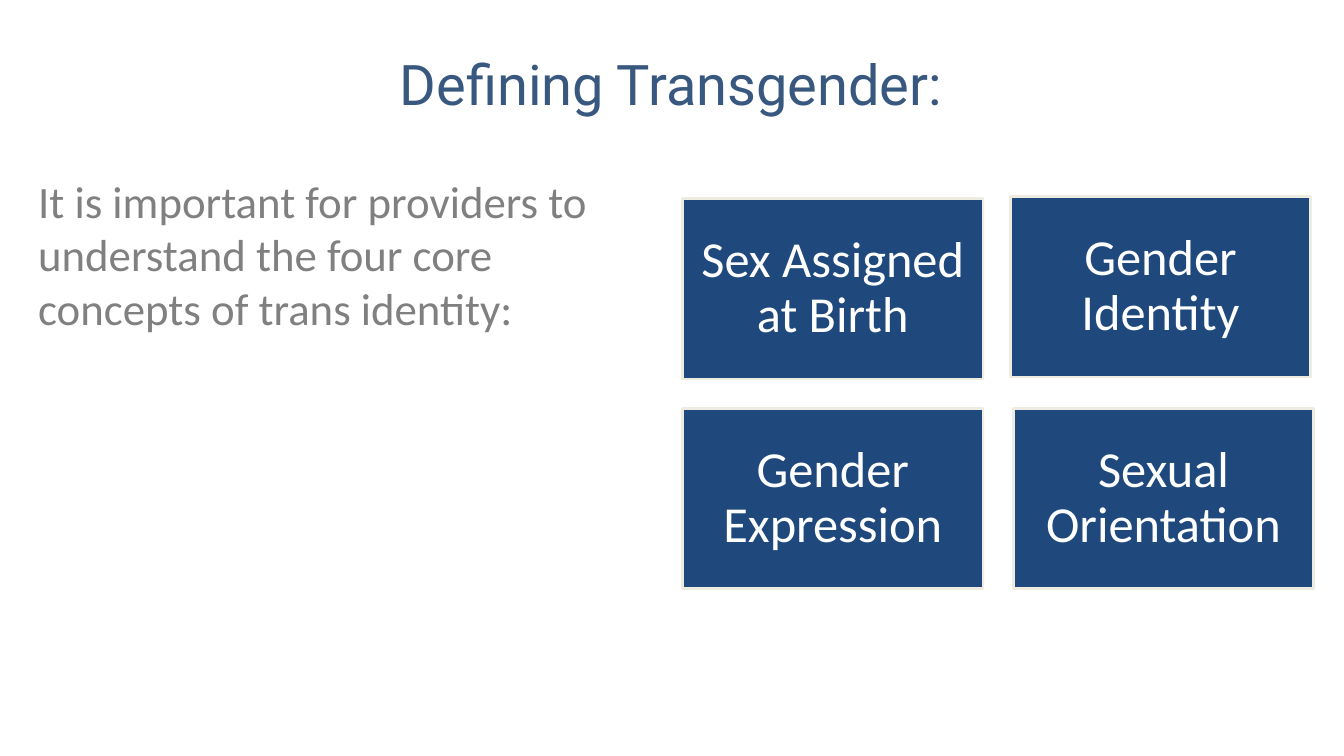
from dataclasses import dataclass

import pptx
import pptx.dml.color
import pptx.enum.shapes
import pptx.enum.text
import pptx.slide
import pptx.text.text
import pptx.util

Inches = pptx.util.Inches
Align = pptx.enum.text.PP_ALIGN
Anchor = pptx.enum.text.MSO_ANCHOR


@dataclass(frozen=True)
class TextStyle:
    font: str
    size: int
    color: str
    align: Align
    anchor: Anchor
    line_spacing: float = 1.0


@dataclass(frozen=True)
class Theme:
    title: TextStyle = TextStyle("Roboto", 40, "39587F", Align.CENTER, Anchor.MIDDLE)
    body: TextStyle = TextStyle("Calibri", 32, "808080", Align.LEFT, Anchor.TOP)
    concept: TextStyle = TextStyle("Calibri", 36, "FFFFFF", Align.CENTER, Anchor.MIDDLE, 0.9)
    box_fill: str = "1F497D"
    box_line: str = "EEECE1"
    box_line_width: int = 2


@dataclass(frozen=True)
class Concept:
    label: str
    left: float
    top: float


THEME = Theme()
BOX_WIDTH, BOX_HEIGHT, BOX_INSET = 2.98, 1.79, 0.15
CONCEPTS = (
    Concept("Sex Assigned at Birth", 6.77, 1.97),
    Concept("Gender Identity", 10.02, 1.95),
    Concept("Gender Expression", 6.77, 4.05),
    Concept("Sexual Orientation", 10.05, 4.05),
)


def rgb(color: str) -> pptx.dml.color.RGBColor:
    return pptx.dml.color.RGBColor.from_string(color)


def write_text(text_frame: pptx.text.text.TextFrame, text: str, style: TextStyle) -> None:
    text_frame.text = text
    text_frame.word_wrap = True
    text_frame.vertical_anchor = style.anchor
    paragraph = text_frame.paragraphs[0]
    paragraph.alignment = style.align
    paragraph.line_spacing = style.line_spacing
    font = paragraph.runs[0].font
    font.name = style.font
    font.size = pptx.util.Pt(style.size)
    font.color.rgb = rgb(style.color)


def add_text(slide: pptx.slide.Slide, text: str, style: TextStyle,
             left: float, top: float, width: float, height: float) -> None:
    shape = slide.shapes.add_textbox(Inches(left), Inches(top), Inches(width), Inches(height))
    write_text(shape.text_frame, text, style)


def add_concept(slide: pptx.slide.Slide, concept: Concept) -> None:
    shape = slide.shapes.add_shape(
        pptx.enum.shapes.MSO_SHAPE.RECTANGLE,
        Inches(concept.left), Inches(concept.top), Inches(BOX_WIDTH), Inches(BOX_HEIGHT))
    shape.shadow.inherit = False
    shape.fill.solid()
    shape.fill.fore_color.rgb = rgb(THEME.box_fill)
    shape.line.color.rgb = rgb(THEME.box_line)
    shape.line.width = pptx.util.Pt(THEME.box_line_width)
    text_frame = shape.text_frame
    text_frame.margin_left = text_frame.margin_right = Inches(BOX_INSET)
    text_frame.margin_top = text_frame.margin_bottom = Inches(BOX_INSET)
    write_text(text_frame, concept.label, THEME.concept)


def main() -> None:
    presentation = pptx.Presentation()
    presentation.slide_width = Inches(13.33)
    presentation.slide_height = Inches(7.5)
    slide = presentation.slides.add_slide(presentation.slide_layouts[6])

    # Title and introduction
    add_text(slide, "Defining Transgender:", THEME.title, 0.28, 0.17, 12.75, 1.31)
    add_text(slide, "It is important for providers to understand the four core "
                    "concepts of trans identity:", THEME.body, 0.28, 1.67, 6.25, 4.47)

    # Four core concepts
    for concept in CONCEPTS:
        add_concept(slide, concept)

    presentation.save("out.pptx")


if __name__ == "__main__":
    main()
